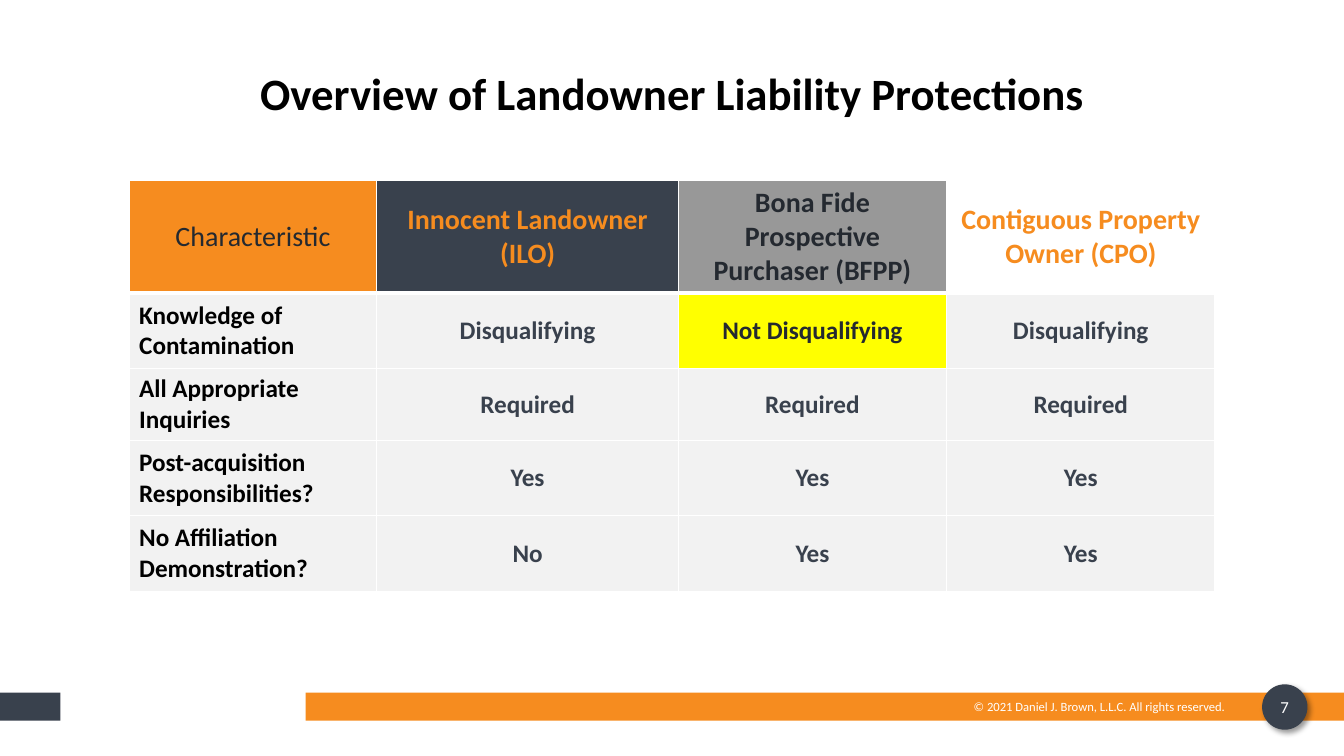
from dataclasses import dataclass

from lxml import etree
from pptx import Presentation
from pptx import util as u
from pptx.dml.color import RGBColor
from pptx.enum import shapes, text
from pptx.oxml import parse_xml
from pptx.oxml.ns import nsdecls, qn

FONT = "Calibri"
ORANGE, SLATE, INK = "F68C1F", "39414D", "242930"
WHITE, BLACK, GREY, PALE, YELLOW = "FFFFFF", "000000", "989898", "F2F2F2", "FFFF00"
LEFT, CENTER, RIGHT = text.PP_ALIGN.LEFT, text.PP_ALIGN.CENTER, text.PP_ALIGN.RIGHT


@dataclass
class Box:
    left: float
    top: float
    width: float
    height: float

    def points(self) -> list:
        return [u.Pt(v) for v in (self.left, self.top, self.width, self.height)]


@dataclass
class Style:
    size: float
    color: str
    bold: bool = False
    align: text.PP_ALIGN = CENTER


@dataclass
class Label:
    wording: str
    box: Box
    style: Style
    wrap: bool = True
    spacing: float = 1.0


@dataclass
class Shape:
    kind: shapes.MSO_SHAPE
    box: Box
    color: str


@dataclass
class Entry:
    wording: str
    fill: str
    style: Style


def rgb(color: str) -> RGBColor:
    return RGBColor.from_string(color)


def write(frame, wording: str, style: Style, spacing: float = 1.0) -> None:
    frame.text = wording
    for paragraph in frame.paragraphs:
        paragraph.alignment = style.align
        paragraph.line_spacing = spacing
        for run in paragraph.runs:
            run.font.name = FONT
            run.font.size = u.Pt(style.size)
            run.font.bold = style.bold
            run.font.color.rgb = rgb(style.color)


def draw_label(slide, label: Label) -> None:
    frame = slide.shapes.add_textbox(*label.box.points()).text_frame
    frame.word_wrap = label.wrap
    write(frame, label.wording, label.style, label.spacing)


def draw_shape(slide, item: Shape):
    shape = slide.shapes.add_shape(item.kind, *item.box.points())
    shape.shadow.inherit = False
    shape.fill.solid()
    shape.fill.fore_color.rgb = rgb(item.color)
    shape.line.fill.background()
    return shape


def add_shadow(shape, blur: float, distance: float, angle: int, opacity: int) -> None:
    effects = shape._element.spPr.find(qn("a:effectLst"))
    effects.append(parse_xml(
        f'<a:outerShdw {nsdecls("a")} blurRad="{u.Pt(blur)}" dist="{u.Pt(distance)}" '
        f'dir="{angle * 60000}" algn="tl" rotWithShape="0"><a:srgbClr val="{BLACK}">'
        f'<a:alpha val="{opacity * 1000}"/></a:srgbClr></a:outerShdw>'))


def set_borders(cell, widths: dict[str, float]) -> None:
    properties = cell._tc.get_or_add_tcPr()
    for position, (side, width) in enumerate(widths.items()):
        line = etree.Element(qn(f"a:ln{side}"), w=str(u.Pt(width)))
        fill = etree.SubElement(line, qn("a:solidFill"))
        etree.SubElement(fill, qn("a:srgbClr"), val=WHITE)
        properties.insert(position, line)


def draw_table(slide, box: Box, columns: list[float], heights: list[float],
               rows: list[list[Entry]]) -> None:
    table = slide.shapes.add_table(len(rows), len(columns), *box.points()).table
    table.first_row = table.horz_banding = False
    for column, width in zip(table.columns, columns):
        column.width = u.Pt(width)
    for r, (height, row) in enumerate(zip(heights, rows)):
        table.rows[r].height = u.Pt(height)
        borders = {"L": 1, "R": 1, "T": 3 if r == 1 else 1, "B": 3 if r == 0 else 1}
        for c, entry in enumerate(row):
            cell = table.cell(r, c)
            cell.vertical_anchor = text.MSO_ANCHOR.MIDDLE
            cell.fill.solid()
            cell.fill.fore_color.rgb = rgb(entry.fill)
            set_borders(cell, borders)
            write(cell.text_frame, entry.wording, entry.style)


# Table content
HEADER = [
    Entry("Characteristic", ORANGE, Style(20, INK)),
    Entry("Innocent Landowner\n(ILO)", SLATE, Style(20, ORANGE, True)),
    Entry("Bona Fide Prospective Purchaser (BFPP)", GREY, Style(20, INK, True)),
    Entry("Contiguous Property Owner (CPO)", WHITE, Style(20, ORANGE, True)),
]
PROTECTIONS = {
    "Knowledge of Contamination": ["Disqualifying", "Not Disqualifying", "Disqualifying"],
    "All Appropriate\nInquiries": ["Required", "Required", "Required"],
    "Post-acquisition Responsibilities?": ["Yes", "Yes", "Yes"],
    "No Affiliation Demonstration?": ["No", "Yes", "Yes"],
}


def answer(wording: str) -> Entry:
    if wording == "Not Disqualifying":
        return Entry(wording, YELLOW, Style(18, INK, True))
    return Entry(wording, PALE, Style(18, SLATE, True))


def main() -> None:
    deck = Presentation()
    deck.slide_width, deck.slide_height = u.Pt(960), u.Pt(540)
    slide = deck.slides.add_slide(deck.slide_layouts[6])

    # Footer band and page badge
    rectangle = shapes.MSO_SHAPE.RECTANGLE
    draw_shape(slide, Shape(rectangle, Box(218.3, 494.8, 741.7, 20), ORANGE))
    draw_shape(slide, Shape(rectangle, Box(0, 494.8, 43.2, 20), SLATE))
    badge = draw_shape(slide, Shape(shapes.MSO_SHAPE.OVAL, Box(901.5, 488.8, 32.4, 32.4), SLATE))
    add_shadow(badge, blur=4, distance=3, angle=45, opacity=40)

    # Title and footer text
    for label in (
        Label("7", Box(900, 494, 35.3, 21.6), Style(12, WHITE)),
        Label("© 2021 Daniel J. Brown, L.L.C. All rights reserved.",
              Box(686.2, 496, 195.8, 18), Style(9, WHITE, align=RIGHT), wrap=False),
        Label("Overview of Landowner Liability Protections",
              Box(68.4, 47.5, 823.7, 38.2), Style(32, BLACK, True), spacing=0.9),
    ):
        draw_label(slide, label)

    # Comparison table
    rows = [HEADER] + [
        [Entry(topic, PALE, Style(18, BLACK, True, LEFT)), *map(answer, answers)]
        for topic, answers in PROTECTIONS.items()
    ]
    columns = [177, 215.3, 191.7, 191.7]
    heights = [80.4, 54, 51.1, 54, 54]
    draw_table(slide, Box(92.2, 129, sum(columns), sum(heights)), columns, heights, rows)

    deck.save("out.pptx")


if __name__ == "__main__":
    main()
